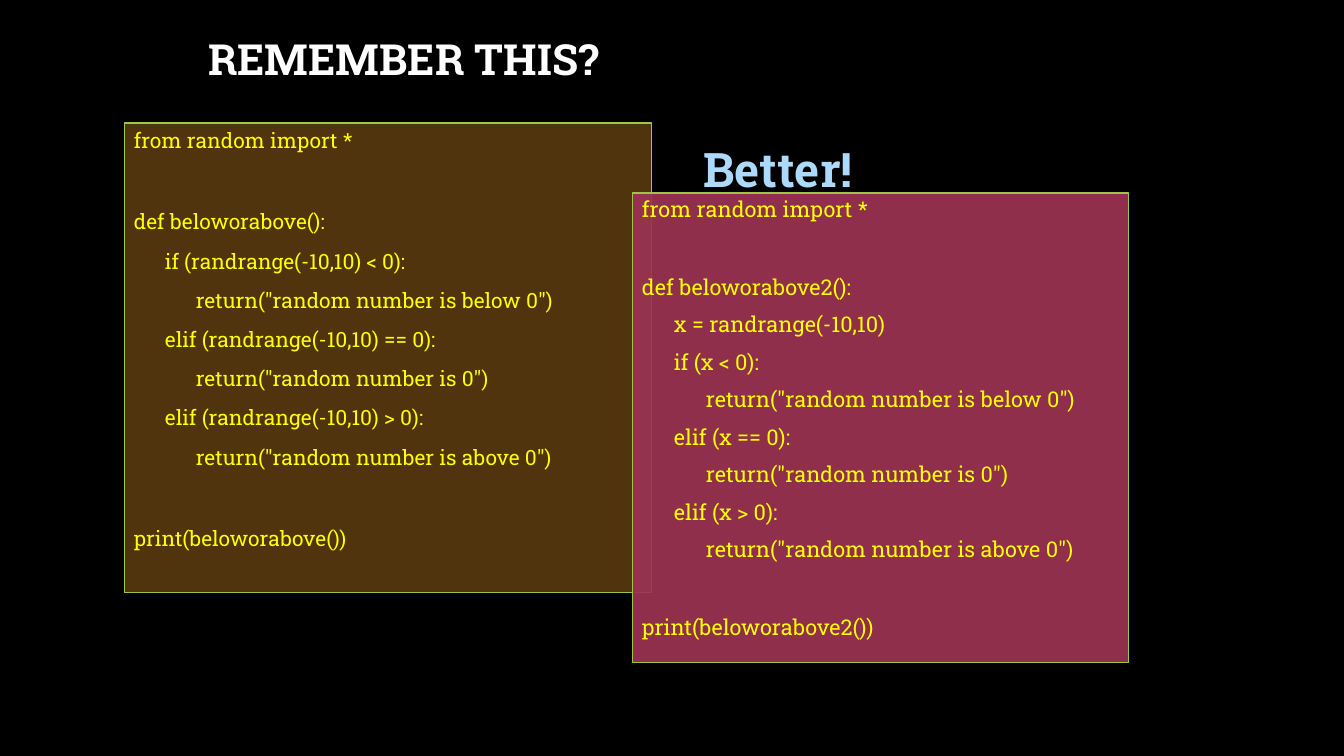
from lxml import etree
from pptx import Presentation
from pptx.dml.color import RGBColor
from pptx.enum.shapes import MSO_SHAPE
from pptx.enum.text import MSO_ANCHOR, PP_ALIGN
from pptx.oxml.ns import qn
from pptx.util import Pt

RECT = MSO_SHAPE.RECTANGLE
TOP, MIDDLE = MSO_ANCHOR.TOP, MSO_ANCHOR.MIDDLE
LEFT, CENTER = PP_ALIGN.LEFT, PP_ALIGN.CENTER
SCALE = 914400 / 100.8
FONT = "Roboto Slab"
LEADING = 1.32
COLORS = {"back": "000000", "title": "FFFFFF", "code": "FFFF00", "better": "ABDAFC",
          "brown": "B5781F", "wine": "9C3351", "edge": "9EC544"}

FIRST = [
    (0, "from random import *"),
    None,
    (0, "def beloworabove():"),
    (1, "if (randrange(-10,10) < 0):"),
    (2, 'return("random number is below 0")'),
    (1, "elif (randrange(-10,10) == 0):"),
    (2, 'return("random number is 0")'),
    (1, "elif (randrange(-10,10) > 0):"),
    (2, 'return("random number is above 0")'),
    None,
    (0, "print(beloworabove())"),
]
SECOND = [
    (0, "from random import *"),
    None,
    (0, "def beloworabove2():"),
    (1, "x = randrange(-10,10)"),
    (1, "if (x < 0):"),
    (2, 'return("random number is below 0")'),
    (1, "elif (x == 0):"),
    (2, 'return("random number is 0")'),
    (1, "elif (x > 0):"),
    (2, 'return("random number is above 0")'),
    None,
    (0, "print(beloworabove2())"),
]


def px(n):
    """Turn pixels into EMU."""
    return round(n * SCALE)


def color(name):
    """Look up a named colour."""
    return RGBColor.from_string(COLORS[name])


def add_run(para, text, size, tint, bold=False):
    """Add one styled run to a paragraph."""
    run = para.add_run()
    run.text = text
    run.font.name = FONT
    run.font.size = Pt(size)
    run.font.bold = bold
    run.font.color.rgb = color(tint)


def set_frame(frame, anchor, top=5):
    """Set wrapping, insets and anchor of a text frame."""
    frame.word_wrap = True
    frame.vertical_anchor = anchor
    frame.margin_left = frame.margin_right = px(9)
    frame.margin_top, frame.margin_bottom = px(top), px(5)


def add_head(slide, box, text, size, tint, align):
    """Place a bold heading in its box."""
    frame = slide.shapes.add_textbox(*map(px, box)).text_frame
    set_frame(frame, MIDDLE)
    para = frame.paragraphs[0]
    para.alignment = align
    para.line_spacing = 0.9
    add_run(para, text, size, tint, True)


def add_code(slide, box, lines, fill, alpha, size, space, step, top):
    """Place a tinted panel of indented code, with gaps for None."""
    panel = slide.shapes.add_shape(RECT, *map(px, box))
    panel.shadow.inherit = False
    panel.fill.solid()
    panel.fill.fore_color.rgb = color(fill)
    tone = panel.fill._xPr.find(".//" + qn("a:srgbClr"))
    etree.SubElement(tone, qn("a:alpha")).set("val", str(alpha * 1000))
    panel.line.color.rgb = color("edge")
    panel.line.width = Pt(0.75)
    frame = panel.text_frame
    set_frame(frame, TOP, top)
    para, before = frame.paragraphs[0], 0
    for line in lines:
        if line is None:
            before += space + size * LEADING
            continue
        level, text = line
        if para.runs:
            para = frame.add_paragraph()
        para.alignment = LEFT
        para.space_before = Pt(round(before, 2))
        props = para._p.get_or_add_pPr()
        props.set("marL", str(px(level * step)))
        props.set("indent", "0")
        add_run(para, text, size, "code")
        before = space


def main():
    """Build and save the slide."""
    deck = Presentation()
    deck.slide_width, deck.slide_height = px(1344), px(756)
    slide = deck.slides.add_slide(deck.slide_layouts[6])
    slide.background.fill.solid()
    slide.background.fill.fore_color.rgb = color("back")
    add_head(slide, (187, 24, 433, 76), "REMEMBER THIS?", 30.6, "title", CENTER)
    add_code(slide, (125, 123, 527, 470), FIRST, "brown", 44, 15, 10, 31, 5)
    add_code(slide, (633, 193, 496, 470), SECOND, "wine", 93, 15.5, 8.2, 32, 3)
    add_head(slide, (694, 134, 433, 76), "Better!", 34, "better", LEFT)
    deck.save("out.pptx")


if __name__ == "__main__":
    main()
